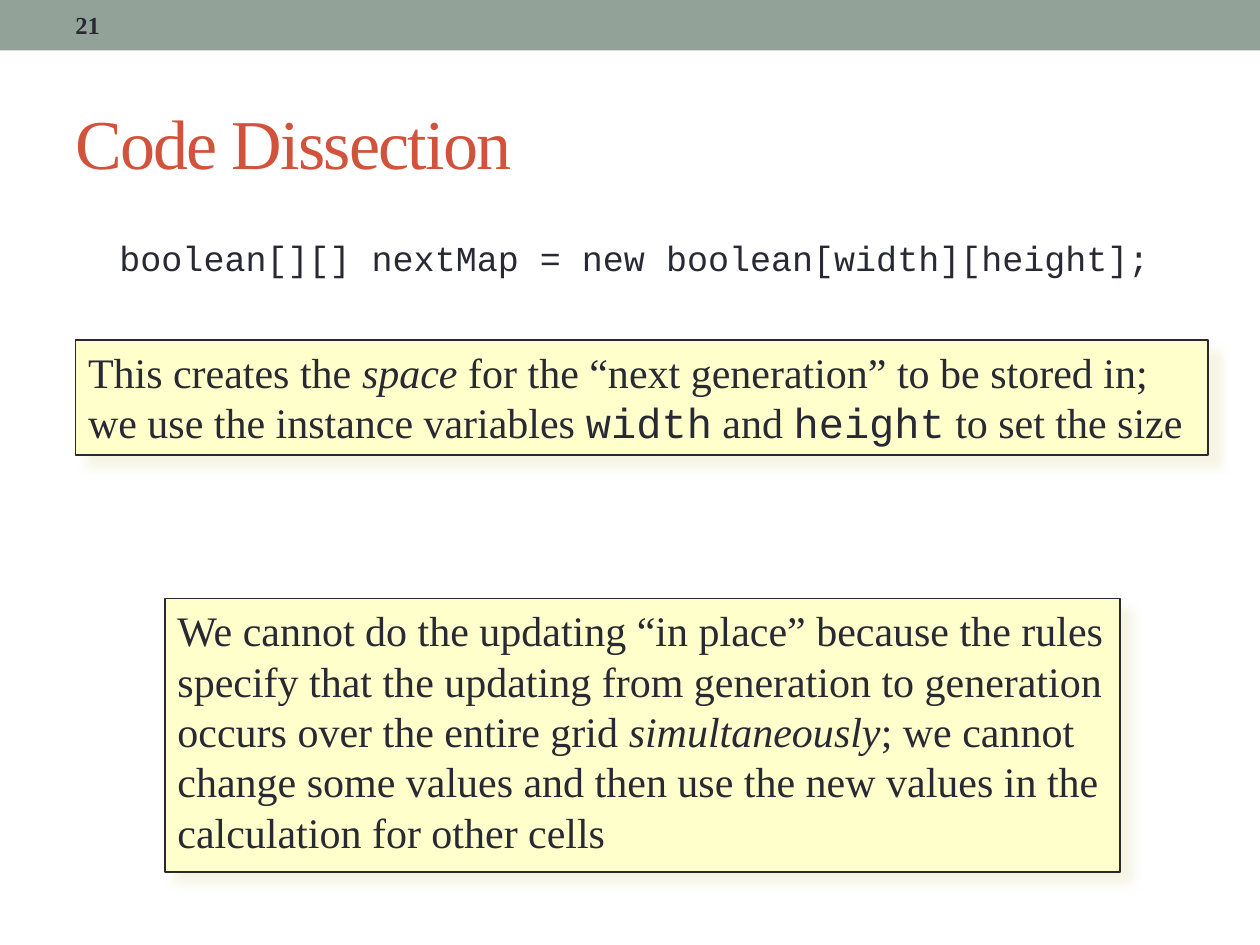
from lxml.etree import SubElement
from pptx import Presentation
from pptx.dml.color import RGBColor
from pptx.enum.shapes import MSO_SHAPE
from pptx.enum.text import MSO_ANCHOR, PP_ALIGN
from pptx.oxml.ns import qn
from pptx.util import Inches, Pt

COLORS = {
    "band": "93A299",
    "title": "D2533C",
    "text": "292934",
    "note": "FFFFCC",
    "shadow": "F3F2DC",
}
SERIF = "Times New Roman"
MONO = "Courier New"


def color(name):
    return RGBColor.from_string(COLORS[name])


def place(box):
    return [Inches(v) for v in box]


def style_font(font, size, name=SERIF, color_name="text", bold=False):
    font.size = Pt(size)
    font.name = name
    font.bold = bold
    font.color.rgb = color(color_name)


def add_rect(slide, box, fill):
    s = slide.shapes.add_shape(MSO_SHAPE.RECTANGLE, *place(box))
    s.shadow.inherit = False
    s.fill.solid()
    s.fill.fore_color.rgb = color(fill)
    s.line.fill.background()
    return s


def add_text(slide, box, text, size, anchor=MSO_ANCHOR.TOP, spacing=None, **style):
    tf = slide.shapes.add_textbox(*place(box)).text_frame
    tf.word_wrap = True
    tf.vertical_anchor = anchor
    p = tf.paragraphs[0]
    style_font(p.font, size, **style)
    r = p.add_run()
    r.text = text
    if spacing is not None:
        r.font._element.set("spc", str(spacing * 100))


def add_shadow(s):
    effects = s._element.spPr.find(qn("a:effectLst"))
    shadow = SubElement(effects, qn("a:outerShdw"), blurRad=str(Pt(5)),
                        dist=str(Pt(8.5)), dir=str(45 * 60000),
                        algn="tl", rotWithShape="0")
    clr = SubElement(shadow, qn("a:srgbClr"), val=COLORS["shadow"])
    SubElement(clr, qn("a:alpha"), val="75000")


def add_note(slide, box, parts):
    s = add_rect(slide, box, "note")
    s.line.color.rgb = color("text")
    s.line.width = Pt(1)
    add_shadow(s)
    tf = s.text_frame
    tf.word_wrap = True
    tf.vertical_anchor = MSO_ANCHOR.TOP
    p = tf.paragraphs[0]
    p.alignment = PP_ALIGN.LEFT
    style_font(p.font, 24)
    for text, kind in parts:
        r = p.add_run()
        r.text = text
        style_font(r.font, 24, MONO if kind == "code" else SERIF)
        r.font.italic = kind == "italic"


def main():
    prs = Presentation()
    prs.slide_width, prs.slide_height = Inches(10), Inches(7.5)
    slide = prs.slides.add_slide(prs.slide_layouts[6])

    add_rect(slide, (0, 0, 10, 0.4), "band")
    add_text(slide, (0.5, 0.02, 3.17, 0.36), "21", 14,
             anchor=MSO_ANCHOR.MIDDLE, bold=True)
    add_text(slide, (0.5, 0.58, 9, 1.08), "Code Dissection", 40,
             anchor=MSO_ANCHOR.MIDDLE, spacing=-1, color_name="title")
    add_text(slide, (0.85, 1.83, 8.97, 0.43),
             "boolean[][] nextMap = new boolean[width][height];", 20, name=MONO)

    add_note(slide, (0.6, 2.7, 8.99, 0.91), [
        ("This creates the ", "plain"),
        ("space", "italic"),
        (" for the “next generation” to be stored in; "
         "we use the instance variables ", "plain"),
        ("width", "code"),
        (" and ", "plain"),
        ("height", "code"),
        (" to set the size", "plain"),
    ])
    add_note(slide, (1.31, 4.75, 7.58, 2.17), [
        ("We cannot do the updating “in place” because the rules specify that "
         "the updating from generation to generation occurs over the entire grid ",
         "plain"),
        ("simultaneously", "italic"),
        ("; we cannot change some values and then use the new values in the "
         "calculation for other cells", "plain"),
    ])

    prs.save("out.pptx")


if __name__ == "__main__":
    main()
